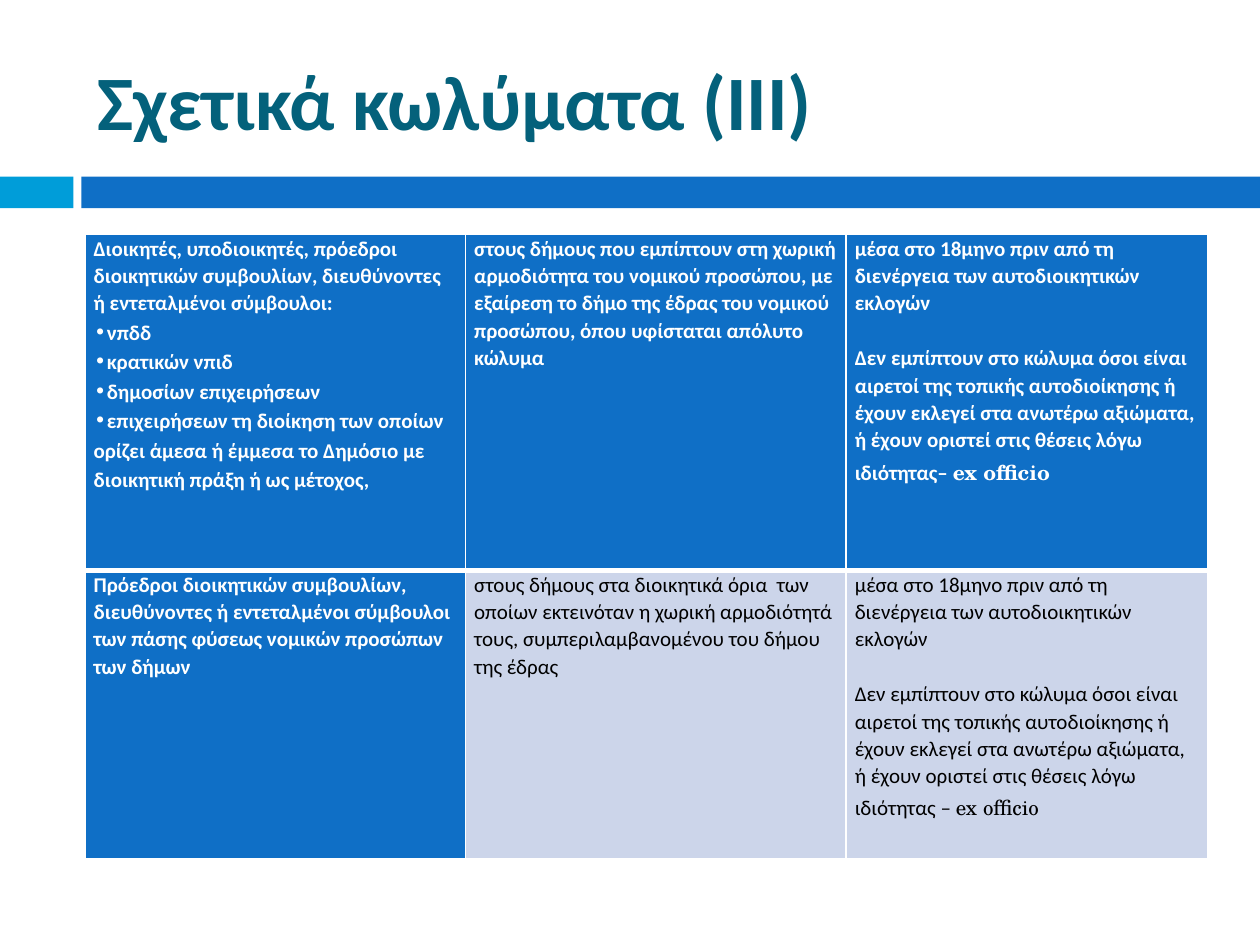
"""Build the slide of election impediments: a title, a two-part band and a table."""
from lxml.etree import Element, SubElement
from pptx import Presentation
from pptx.dml.color import RGBColor
from pptx.enum.shapes import MSO_SHAPE as Shape
from pptx.enum.text import MSO_ANCHOR as Anchor, PP_ALIGN as Align
from pptx.oxml.ns import qn
from pptx.util import Pt

TITLE = "Σχετικά κωλύματα (ΙΙΙ)"
PERIOD = "μέσα στο 18μηνο πριν από τη διενέργεια των αυτοδιοικητικών εκλογών"
EXCEPTION = ("Δεν εμπίπτουν στο κώλυμα όσοι είναι αιρετοί της τοπικής αυτοδιοίκησης ή έχουν "
             "εκλεγεί στα ανωτέρω αξιώματα, ή έχουν οριστεί στις θέσεις λόγω ιδιότητας")
LATIN = "ex officio"
ROWS = [
    [
        ["Διοικητές, υποδιοικητές, πρόεδροι διοικητικών συμβουλίων, διευθύνοντες ή "
         "εντεταλμένοι σύμβουλοι:",
         "∙νπδδ",
         "∙κρατικών νπιδ",
         "∙δημοσίων επιχειρήσεων",
         "∙επιχειρήσεων τη διοίκηση των οποίων ορίζει άμεσα ή έμμεσα το Δημόσιο με "
         "διοικητική πράξη ή ως μέτοχος,"],
        ["στους δήμους που εμπίπτουν στη χωρική αρμοδιότητα του νομικού προσώπου, με εξαίρεση "
         "το δήμο της έδρας του νομικού προσώπου, όπου υφίσταται απόλυτο κώλυμα"],
        [PERIOD, EXCEPTION + "– " + LATIN],
    ],
    [
        ["Πρόεδροι διοικητικών συμβουλίων, διευθύνοντες ή εντεταλμένοι σύμβουλοι των πάσης "
         "φύσεως νομικών προσώπων των δήμων"],
        ["στους δήμους στα διοικητικά όρια  των οποίων εκτεινόταν η χωρική αρμοδιότητά τους, "
         "συμπεριλαμβανομένου του δήμου της έδρας"],
        [PERIOD, EXCEPTION + " – " + LATIN],
    ],
]
COLUMN_WIDTHS = [217.5, 217.5, 206.5]
ROW_HEIGHTS = [192, 165]
BANDS = [(0, 42, "009DD9"), (46.5, 673.5, "0F6FC6")]
BLUE, PALE, WHITE, BLACK, TEAL = "0F6FC6", "CCD5EA", "FFFFFF", "000000", "04617B"
BODY_FONT, LATIN_FONT = "Calibri", "TeX Gyre Schola"
LEFT = 48.5


def color(value):
    return RGBColor.from_string(value)


def style(span, size, ink, bold, name=BODY_FONT):
    span.font.size, span.font.bold, span.font.name = Pt(size), bold, name
    span.font.color.rgb = color(ink)


def add_bullet(para, ink):
    properties = para._p.get_or_add_pPr()
    properties.set("marL", "0")
    properties.set("indent", str(-Pt(6)))
    fill = SubElement(properties, qn("a:buClr"))
    SubElement(fill, qn("a:srgbClr"), val=ink)
    SubElement(properties, qn("a:buChar"), char="∙")


def add_borders(cell, widths):
    properties = cell._tc.get_or_add_tcPr()
    for index, (side, width) in enumerate(widths.items()):
        line = Element(qn("a:ln" + side), w=str(Pt(width)))
        SubElement(SubElement(line, qn("a:solidFill")), qn("a:srgbClr"), val=WHITE)
        properties.insert(index, line)


def fill_cell(cell, texts, is_header, is_first):
    emphasized = is_header or is_first
    ink = WHITE if emphasized else BLACK
    cell.fill.solid()
    cell.fill.fore_color.rgb = color(BLUE if emphasized else PALE)
    cell.margin_left = cell.margin_right = Pt(5)
    cell.margin_top = cell.margin_bottom = 0
    add_borders(cell, {"L": 1, "R": 1, "T": 1 if is_header else 3, "B": 3 if is_header else 1})
    frame = cell.text_frame
    for index, text in enumerate(texts):
        para = frame.add_paragraph() if index else frame.paragraphs[0]
        bulleted = text.startswith("∙")
        para.line_spacing = 1.15 if bulleted else 1.07
        if index and not bulleted:
            para.space_before = Pt(15.6)
        if bulleted:
            add_bullet(para, ink)
        main, latin, _ = text.lstrip("∙").partition(LATIN)
        for part, name in ((main, BODY_FONT), (latin, LATIN_FONT)):
            if part:
                span = para.add_run()
                span.text = part
                style(span, 12, ink, emphasized, name)


def main():
    deck = Presentation()
    deck.slide_width, deck.slide_height = Pt(720), Pt(540)
    page = deck.slides.add_slide(deck.slide_layouts[5])

    for left, width, fill in BANDS:
        band = page.shapes.add_shape(Shape.RECTANGLE, Pt(left), Pt(101), Pt(width), Pt(18))
        band.shadow.inherit = False
        band.fill.solid()
        band.fill.fore_color.rgb = color(fill)
        band.line.fill.background()

    title = page.shapes.title
    title.left, title.top, title.width, title.height = Pt(LEFT), Pt(18), Pt(642), Pt(78)
    title.text_frame.text = TITLE
    title.text_frame.vertical_anchor = Anchor.MIDDLE
    para = title.text_frame.paragraphs[0]
    para.alignment = Align.LEFT
    style(para.runs[0], 44, TEAL, True)

    table = page.shapes.add_table(len(ROWS), len(COLUMN_WIDTHS), Pt(LEFT), Pt(134),
                                  Pt(sum(COLUMN_WIDTHS)), Pt(sum(ROW_HEIGHTS))).table
    table.first_row = table.horz_banding = False
    for column, width in zip(table.columns, COLUMN_WIDTHS):
        column.width = Pt(width)
    for row_index, (row, height) in enumerate(zip(table.rows, ROW_HEIGHTS)):
        row.height = Pt(height)
        for column_index, texts in enumerate(ROWS[row_index]):
            fill_cell(row.cells[column_index], texts, row_index == 0, column_index == 0)

    deck.save("out.pptx")


if __name__ == "__main__":
    main()
